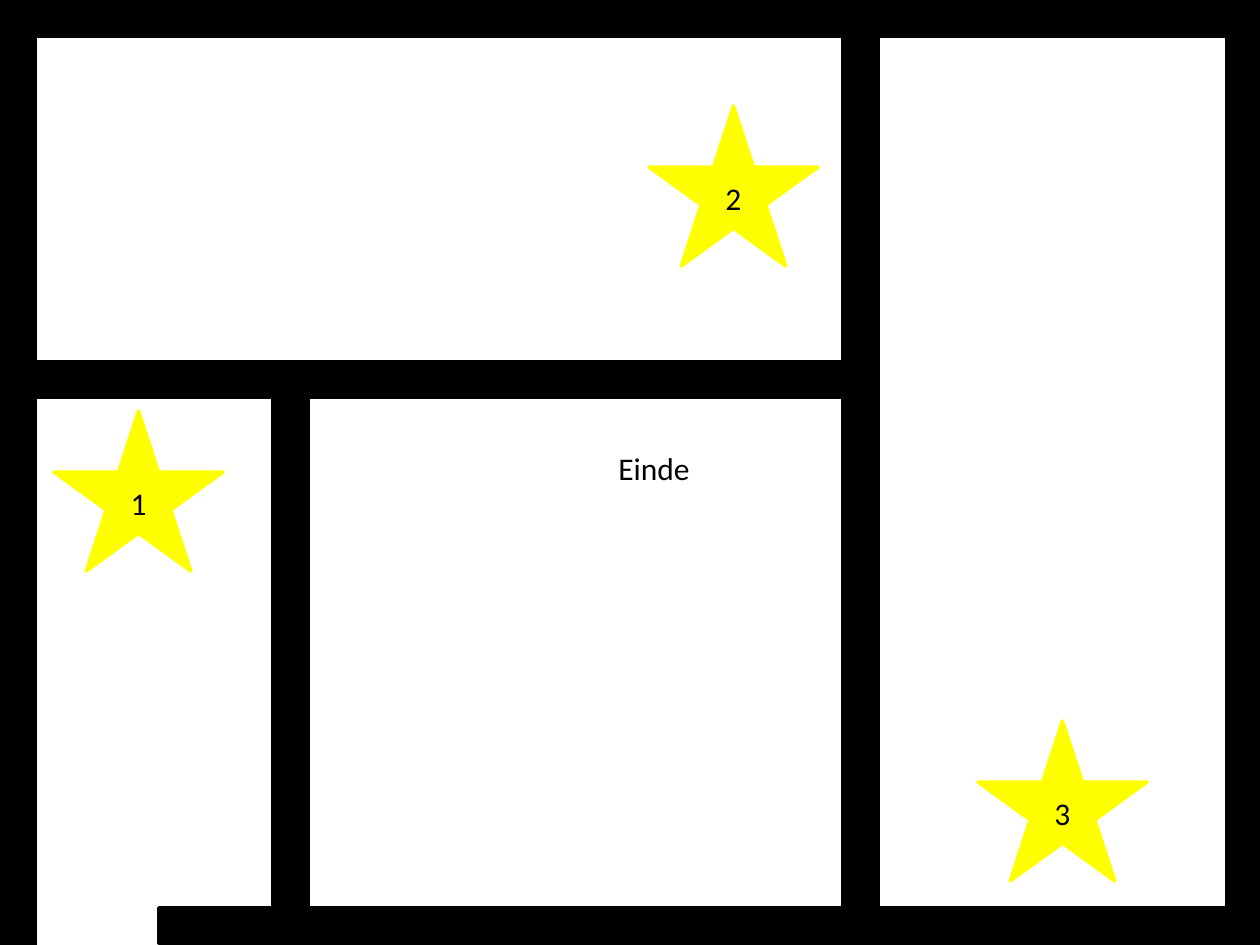
from dataclasses import dataclass

from pptx import Presentation
from pptx.dml.color import RGBColor
from pptx.enum.shapes import MSO_SHAPE
from pptx.enum.text import MSO_ANCHOR, PP_ALIGN
from pptx.shapes.autoshape import Shape
from pptx.slide import Slide
from pptx.util import Emu, Inches, Pt

RECTANGLE, STAR = MSO_SHAPE.RECTANGLE, MSO_SHAPE.STAR_5_POINT
MIDDLE, CENTER = MSO_ANCHOR.MIDDLE, PP_ALIGN.CENTER

BLACK = RGBColor(0x00, 0x00, 0x00)
WHITE = RGBColor(0xFF, 0xFF, 0xFF)
YELLOW = RGBColor(0xFF, 0xFF, 0x00)

PX_PER_INCH = 126
SLIDE_WIDTH, SLIDE_HEIGHT = 1260, 945
WALL_THICKNESS = 35
STAR_WIDTH, STAR_HEIGHT = 169, 160


@dataclass(frozen=True)
class Wall:
    """An upright bar, placed before it is turned about its centre."""
    left: int
    top: int
    length: int
    rotation: int = 0


@dataclass(frozen=True)
class Marker:
    label: str
    left: int
    top: int
    width: int = STAR_WIDTH
    height: int = STAR_HEIGHT
    kind: MSO_SHAPE = STAR
    color: RGBColor = YELLOW


WALLS = [
    # Outer walls: left, right, top, bottom
    Wall(0, 0, SLIDE_HEIGHT),
    Wall(1227, 0, SLIDE_HEIGHT),
    Wall(615, -617, 1271, 90),
    Wall(692, 375, 1101, 90),
    # Inner walls
    Wall(273, 362, 582),
    Wall(146, 236, 287, 90),
    Wall(564, 86, 587, 270),
    Wall(843, -1, 911),
]

MARKERS = [
    Marker("Einde", 600, 446, 108, 44, RECTANGLE, WHITE),
    Marker("1", 54, 411),
    Marker("2", 649, 106),
    Marker("3", 978, 721),
]


def px(value: int) -> Emu:
    return Inches(value / PX_PER_INCH)


def add_block(slide: Slide, kind: MSO_SHAPE, left: int, top: int,
              width: int, height: int, color: RGBColor) -> Shape:
    block = slide.shapes.add_shape(kind, px(left), px(top), px(width), px(height))
    block.shadow.inherit = False
    block.fill.solid()
    block.fill.fore_color.rgb = color
    block.line.color.rgb = color
    block.line.width = Pt(2)
    return block


def draw_wall(slide: Slide, wall: Wall) -> None:
    bar = add_block(slide, RECTANGLE, wall.left, wall.top,
                    WALL_THICKNESS, wall.length, BLACK)
    bar.rotation = wall.rotation


def draw_marker(slide: Slide, marker: Marker) -> None:
    block = add_block(slide, marker.kind, marker.left, marker.top,
                      marker.width, marker.height, marker.color)
    frame = block.text_frame
    frame.text = marker.label
    frame.vertical_anchor = MIDDLE
    paragraph = frame.paragraphs[0]
    paragraph.alignment = CENTER
    font = paragraph.runs[0].font
    font.name = "Calibri"
    font.size = Pt(18)
    font.color.rgb = BLACK


def main() -> None:
    presentation = Presentation()
    presentation.slide_width = px(SLIDE_WIDTH)
    presentation.slide_height = px(SLIDE_HEIGHT)
    slide = presentation.slides.add_slide(presentation.slide_layouts[6])

    # Maze
    for wall in WALLS:
        draw_wall(slide, wall)

    # Finish and numbered stars
    for marker in MARKERS:
        draw_marker(slide, marker)

    presentation.save("out.pptx")


if __name__ == "__main__":
    main()
